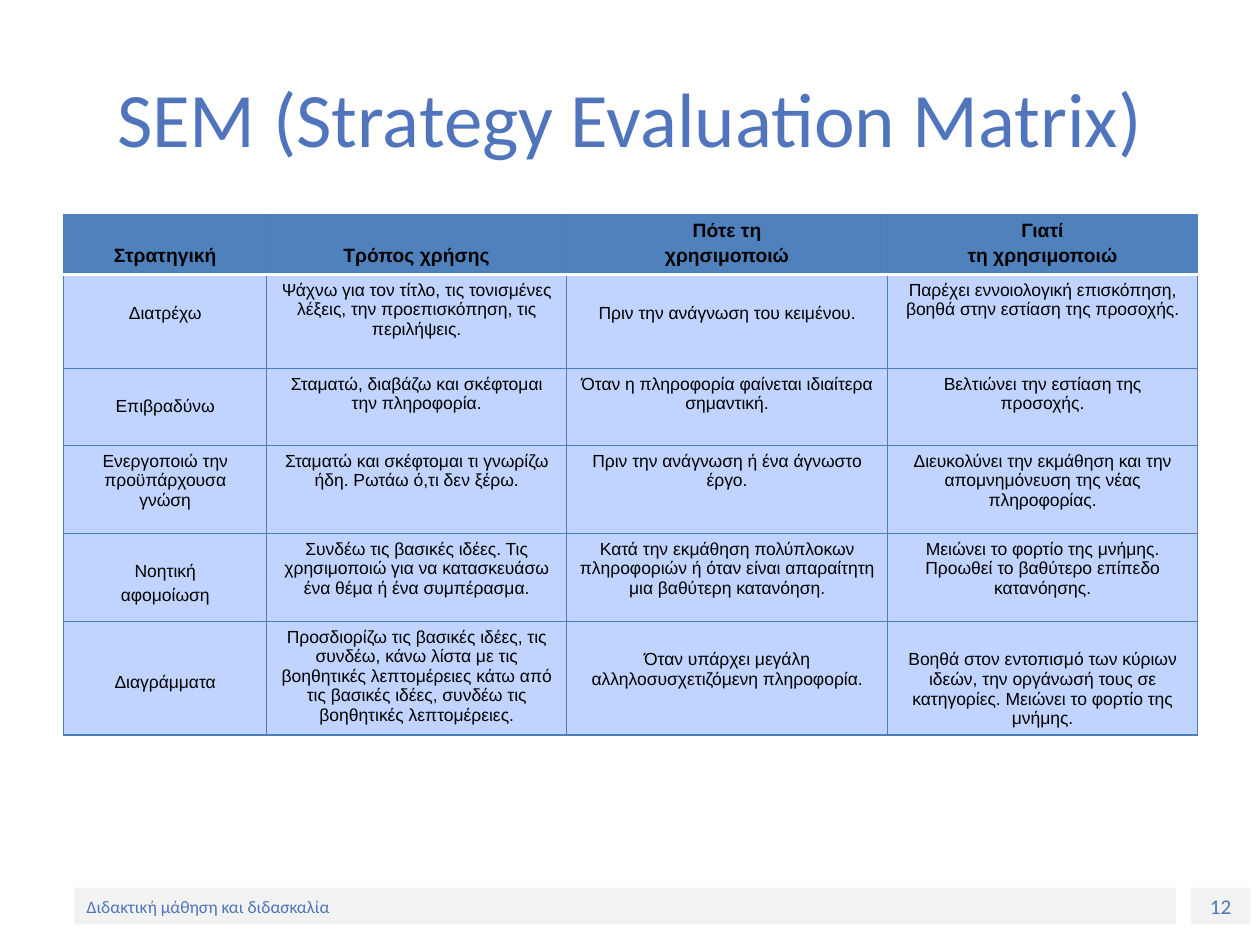
from pptx import Presentation
from pptx.dml.color import RGBColor
from pptx.enum.shapes import MSO_SHAPE as Shape
from pptx.enum.text import MSO_ANCHOR as Anchor, PP_ALIGN as Align
from pptx.oxml import parse_xml
from pptx.oxml.ns import nsdecls
from pptx.util import Pt

ACCENT, FOOTER_GREY, BORDER = "5075BC", "F2F2F2", "4B7EBC"
HEADER_FILL, BODY_FILL = "4F81BD", "C0D4FF"
COLUMN_WIDTHS = [116, 171.4, 183.4, 177.2]
ROW_HEIGHTS = [34.3, 53.7, 44, 50.3, 50.3, 65.1]
STRATEGIES = [
    ["Στρατηγική", "Τρόπος χρήσης", "Πότε τη\nχρησιμοποιώ", "Γιατί\nτη χρησιμοποιώ"],
    ["Διατρέχω",
     "Ψάχνω για τον τίτλο, τις τονισμένες λέξεις, την προεπισκόπηση, τις περιλήψεις.",
     "Πριν την ανάγνωση του κειμένου.",
     "Παρέχει εννοιολογική επισκόπηση, βοηθά στην εστίαση της προσοχής."],
    ["Επιβραδύνω",
     "Σταματώ, διαβάζω και σκέφτομαι την πληροφορία.",
     "Όταν η πληροφορία φαίνεται ιδιαίτερα σημαντική.",
     "Βελτιώνει την εστίαση της προσοχής."],
    ["Ενεργοποιώ την προϋπάρχουσα γνώση",
     "Σταματώ και σκέφτομαι τι γνωρίζω ήδη. Ρωτάω ό,τι δεν ξέρω.",
     "Πριν την ανάγνωση ή ένα άγνωστο έργο.",
     "Διευκολύνει την εκμάθηση και την απομνημόνευση της νέας πληροφορίας."],
    ["Νοητική\nαφομοίωση",
     "Συνδέω τις βασικές ιδέες. Τις χρησιμοποιώ για να κατασκευάσω ένα θέμα ή ένα συμπέρασμα.",
     "Κατά την εκμάθηση πολύπλοκων πληροφοριών ή όταν είναι απαραίτητη μια βαθύτερη κατανόηση.",
     "Μειώνει το φορτίο της μνήμης. Προωθεί το βαθύτερο επίπεδο κατανόησης."],
    ["Διαγράμματα",
     "Προσδιορίζω τις βασικές ιδέες, τις συνδέω, κάνω λίστα με τις βοηθητικές λεπτομέρειες "
     "κάτω από τις βασικές ιδέες, συνδέω τις βοηθητικές λεπτομέρειες.",
     "Όταν υπάρχει μεγάλη αλληλοσυσχετιζόμενη πληροφορία.",
     "Βοηθά στον εντοπισμό των κύριων ιδεών, την οργάνωσή τους σε κατηγορίες. "
     "Μειώνει το φορτίο της μνήμης."],
]
LINES_DOWN = {(0, 0): 1, (0, 1): 1, (1, 0): 1, (1, 2): 1, (2, 0): 1,
              (4, 0): 1, (5, 0): 2, (5, 2): 1, (5, 3): 1}


def color(hex_value):
    """Turn a hex string into a colour."""
    return RGBColor.from_string(hex_value)


def write(frame, text, size, font="Calibri", ink=ACCENT, bold=False, align=Align.CENTER, gap=0):
    """Write each line of text as a formatted paragraph."""
    frame.word_wrap = True
    for index, line in enumerate(text.split("\n")):
        paragraph = frame.add_paragraph() if index else frame.paragraphs[0]
        paragraph.text = line
        paragraph.alignment = align
        paragraph.space_before = Pt(gap if index else 0)
        paragraph.font.size = Pt(size)
        paragraph.font.name = font
        paragraph.font.bold = bold
        paragraph.font.color.rgb = color(ink)


def add_title(slide, text):
    """Place and format the title."""
    title = slide.shapes.title
    title.left, title.top, title.width, title.height = Pt(36), Pt(21.6), Pt(648), Pt(90)
    title.text_frame.vertical_anchor = Anchor.MIDDLE
    write(title.text_frame, text, 44)


def add_footer_bar(slide, left, width, text, size, align):
    """Add one grey bar of the footer."""
    bar = slide.shapes.add_shape(Shape.RECTANGLE, Pt(left), Pt(507.2), Pt(width), Pt(21))
    bar.shadow.inherit = False
    bar.fill.solid()
    bar.fill.fore_color.rgb = color(FOOTER_GREY)
    bar.line.fill.background()
    bar.text_frame.vertical_anchor = Anchor.MIDDLE
    write(bar.text_frame, text, size, align=align)


def set_border(cell, side, ink, width):
    """Draw one side of a cell's border."""
    cell._tc.get_or_add_tcPr().append(parse_xml(
        f'<a:ln{side} {nsdecls("a")} w="{Pt(width)}"><a:solidFill>'
        f'<a:srgbClr val="{ink}"/></a:solidFill></a:ln{side}>'))


def format_cell(cell, text, row, column):
    """Fill, border and write one cell of the matrix."""
    header = row == 0
    size = 11 if header else 10
    header_edge = {0: "B", 1: "T"}.get(row)
    for side in "LRTB":
        set_border(cell, side, *(("FFFFFF", 2) if side == header_edge else (BORDER, 0.75)))
    cell.fill.solid()
    cell.fill.fore_color.rgb = color(HEADER_FILL if header else BODY_FILL)
    cell.margin_left = cell.margin_right = Pt(7.6)
    cell.margin_top = Pt(3.6 + 1.3 * size * LINES_DOWN.get((row, column), 0))
    cell.margin_bottom = Pt(3.6)
    write(cell.text_frame, text, size, font="Arial", ink="000000", bold=header, gap=2)


def add_matrix(slide):
    """Add the strategy table."""
    matrix = slide.shapes.add_table(
        len(ROW_HEIGHTS), len(COLUMN_WIDTHS), Pt(36.4), Pt(122.4),
        Pt(sum(COLUMN_WIDTHS)), Pt(sum(ROW_HEIGHTS))).table
    for column, width in zip(matrix.columns, COLUMN_WIDTHS):
        column.width = Pt(width)
    for row, (height, texts) in enumerate(zip(ROW_HEIGHTS, STRATEGIES)):
        matrix.rows[row].height = Pt(height)
        for column, text in enumerate(texts):
            format_cell(matrix.cell(row, column), text, row, column)


def main():
    """Build and save the slide."""
    deck = Presentation()
    deck.slide_width, deck.slide_height = Pt(720), Pt(540)
    slide = deck.slides.add_slide(deck.slide_layouts[5])
    add_footer_bar(slide, 680.5, 34, "12", 12, Align.CENTER)
    add_footer_bar(slide, 42.5, 629.3, "Διδακτική μάθηση και διδασκαλία", 10, Align.LEFT)
    add_title(slide, "SEM (Strategy Evaluation Matrix)")
    add_matrix(slide)
    deck.save("out.pptx")


if __name__ == "__main__":
    main()
